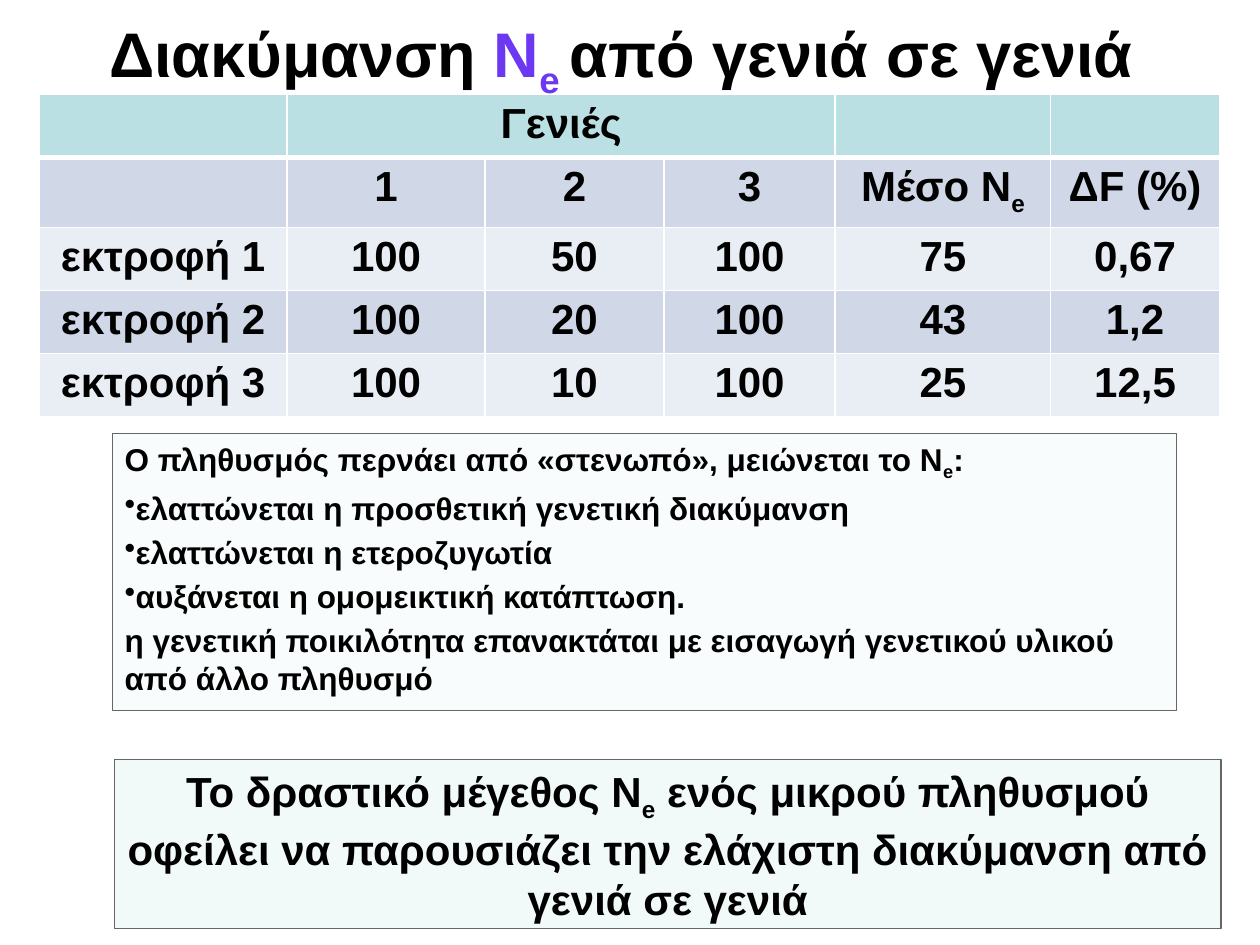
"""Build the slide on how Ne varies from generation to generation."""
from lxml.etree import SubElement
from pptx import Presentation
from pptx.dml.color import RGBColor
from pptx.enum.shapes import MSO_SHAPE
from pptx.enum.text import MSO_ANCHOR, PP_ALIGN
from pptx.oxml.ns import qn
from pptx.util import Inches, Pt

THEME = {
    "font": "Arial", "title": 36, "large": 24, "body": 18,
    "text": "000000", "accent": "6D38F2", "panel": "F1F9F9", "line": "666666",
    "header": "BBE0E3", "bands": ("E9EDF4", "D0D8E8"), "border": "FFFFFF",
}
COLS, ROWS = 100, 75
prs = Presentation()
prs.slide_width, prs.slide_height = Inches(10), Inches(7.5)
CW, RH = prs.slide_width / COLS, prs.slide_height / ROWS
s = prs.slides.add_slide(prs.slide_layouts[6])


def grid(x, y, w, h):
    return int(x * CW), int(y * RH), int(w * CW), int(h * RH)


def write(p, runs, size, align=PP_ALIGN.CENTER):
    p.alignment = align
    p.font.name, p.font.size, p.font.bold = THEME["font"], Pt(THEME[size]), True
    p.font.color.rgb = RGBColor.from_string(THEME["text"])
    for text in runs:
        r = p.add_run()
        r.text = text
        if text.strip() == "e":
            r.font._element.set("baseline", "-25000")


tf = s.shapes.add_textbox(*grid(4.3, 0, 90, 9.1)).text_frame
tf.word_wrap, tf.vertical_anchor = True, MSO_ANCHOR.MIDDLE
p = tf.paragraphs[0]
write(p, ["Διακύμανση ", "N", "e ", "από γενιά σε γενιά"], "title")
for r in p.runs[1:3]:
    r.font.color.rgb = RGBColor.from_string(THEME["accent"])

panels = [
    (grid(8.9, 34.4, 84.5, 22), 37, "body", PP_ALIGN.LEFT, [
        ["Ο πληθυσμός περνάει από «στενωπό», μειώνεται το Ν", "e", ":"],
        ["•", "ελαττώνεται η προσθετική γενετική διακύμανση"],
        ["•", "ελαττώνεται η ετεροζυγωτία"],
        ["•", "αυξάνεται η ομομεικτική κατάπτωση."],
        ["η γενετική ποικιλότητα επανακτάται με εισαγωγή γενετικού υλικού από άλλο πληθυσμό"],
    ]),
    (grid(9.1, 60.3, 87.8, 13.4), 100, "large", PP_ALIGN.CENTER, [
        ["Το δραστικό μέγεθος N", "e",
         " ενός μικρού πληθυσμού οφείλει να παρουσιάζει την ελάχιστη διακύμανση από γενιά σε γενιά"],
    ]),
]
for box, opacity, size, align, lines in panels:
    sp = s.shapes.add_shape(MSO_SHAPE.RECTANGLE, *box)
    sp.shadow.inherit = False
    sp.fill.solid()
    sp.fill.fore_color.rgb = RGBColor.from_string(THEME["panel"])
    color = sp._element.spPr.find(qn("a:solidFill"))[0]
    SubElement(color, qn("a:alpha"), val=str(opacity * 1000))
    sp.line.color.rgb = RGBColor.from_string(THEME["line"])
    sp.line.width = Pt(0.75)
    tf = sp.text_frame
    tf.word_wrap, tf.vertical_anchor = True, MSO_ANCHOR.TOP
    for i, runs in enumerate(lines):
        p = tf.add_paragraph() if i else tf.paragraphs[0]
        bullet = runs[0] == "•"
        p.space_before = Pt(0.2 * THEME[size])
        if bullet:
            SubElement(p._p.get_or_add_pPr(), qn("a:buChar"), char="•")
        write(p, runs[bullet:], size, align)

data = [
    ["", "Γενιές", "", "", "", ""],
    ["", "1", "2", "3", "Μέσο Ν|e", "ΔF (%)"],
    ["εκτροφή 1", "100", "50", "100", "75", "0,67"],
    ["εκτροφή 2", "100", "20", "100", "43", "1,2"],
    ["εκτροφή 3", "100", "10", "100", "25", "12,5"],
]
frame = s.shapes.add_table(len(data), len(data[0]), *grid(3.1, 7.5, 93.7, 25))
table = frame.table
for col, width in zip(table.columns, (19.7, 15.7, 14.2, 13.6, 17.1, 13.4)):
    col.width = int(width * CW)
for row in table.rows:
    row.height = int(4.1 * RH)
table.cell(0, 1).merge(table.cell(0, 3))
for i, values in enumerate(data):
    for j, value in enumerate(values):
        cell = table.cell(i, j)
        write(cell.text_frame.paragraphs[0], value.split("|") if value else [], "large")
        tcPr = cell._tc.get_or_add_tcPr()
        for side in ("L", "R", "T", "B"):
            thick = (i, side) in ((0, "B"), (1, "T"))
            ln = SubElement(tcPr, qn(f"a:ln{side}"), w=str(Pt(3 if thick else 1)))
            SubElement(SubElement(ln, qn("a:solidFill")), qn("a:srgbClr"), val=THEME["border"])
        cell.fill.solid()
        cell.fill.fore_color.rgb = RGBColor.from_string(THEME["bands"][i % 2] if i else THEME["header"])

prs.save("out.pptx")
